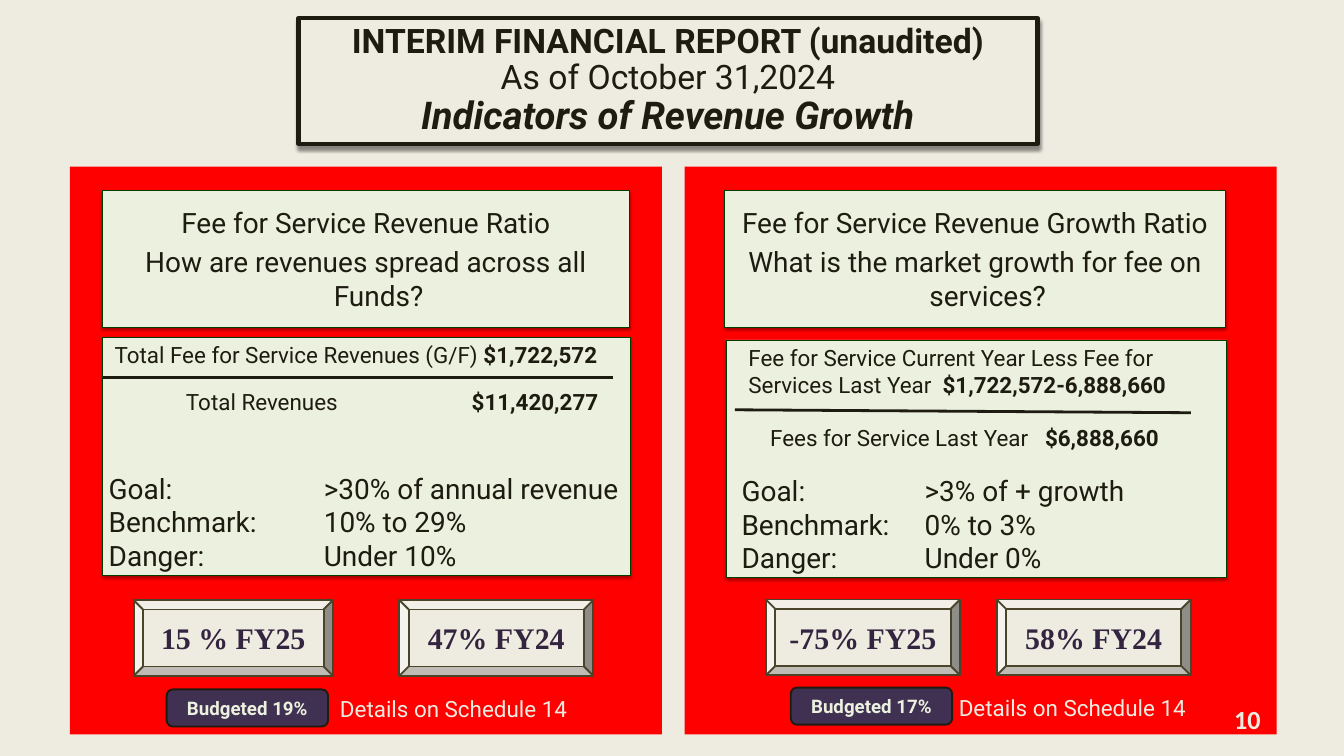
from dataclasses import dataclass

from lxml.etree import SubElement
from pptx import Presentation
from pptx.dml.color import RGBColor
from pptx.enum.shapes import MSO_CONNECTOR, MSO_SHAPE as Shape
from pptx.enum.text import MSO_ANCHOR as Anchor, PP_ALIGN as Align
from pptx.oxml.ns import qn
from pptx.util import Cm, Pt


@dataclass(frozen=True)
class Theme:
    paper: str = "EEECE1"
    panel: str = "FF0000"
    card: str = "EBF1DE"
    card_edge: str = "003E00"
    ink: str = "1E1C11"
    badge: str = "403152"
    bevel_edge: str = "4A452A"
    bevel_ink: str = "332440"
    body_font: str = "Roboto"
    bevel_font: str = "Times New Roman"
    number_font: str = "Calibri"
    title: float = 36.1
    subtitle: float = 41
    heading: float = 30
    formula: float = 24
    result: float = 32
    budget: float = 20
    page: float = 28


@dataclass(frozen=True)
class Ratio:
    """Wording of one panel, and its boxes in cm from the panel's corner."""
    question: tuple
    question_box: tuple
    card_box: tuple
    formula: tuple          # (label, value) above and below the rule
    formula_box: tuple
    formula_inset: float
    formula_tabs: tuple     # tab stops of each formula line
    formula_gap: float
    rule: tuple
    targets: tuple
    targets_box: tuple
    targets_tab: float
    results: tuple          # (text, box)
    budget: str
    budget_box: tuple
    details_box: tuple


THEME = Theme()
PANEL_SIZE = (22.38, 21.46)
LEVELS = ("Goal:", "Benchmark:", "Danger:")

REVENUE = Ratio(
    question=("Fee for Service Revenue Ratio",
              "How are revenues spread across all Funds?"),
    question_box=(1.22, 0.91, 19.94, 5.16),
    card_box=(1.24, 6.45, 19.96, 8.99),
    formula=(("\tTotal Fee for Service Revenues (G/F) ", "$1,722,572"),
             ("\tTotal Revenues\t", "$11,420,277")),
    formula_box=(1.24, 6.45, 19.96, 3.2),
    formula_inset=0.25,
    formula_tabs=((0.2,), (2.9, 13.7)),
    formula_gap=22,
    rule=(1.24, 7.98, 20.52, 7.98),
    targets=(">30% of annual revenue", "10% to 29%", "Under 10%"),
    targets_box=(1.22, 11.38, 19.94, 4.11),
    targets_tab=8.13,
    results=(("15 % FY25", (2.41, 16.38, 7.54, 2.87)),
             ("47% FY24", (12.45, 16.38, 7.34, 2.87))),
    budget="Budgeted 19%",
    budget_box=(3.66, 19.76, 6.1, 1.4),
    details_box=(9.96, 19.86, 9.86, 1.27))

GROWTH = Ratio(
    question=("Fee for Service Revenue Growth Ratio",
              "What is the market growth for fee on services?"),
    question_box=(1.5, 0.89, 18.95, 5.18),
    card_box=(1.57, 6.55, 18.9, 8.99),
    formula=(("Fee for Service Current Year Less Fee for Services Last Year\t",
              "$1,722,572-6,888,660"),
             ("\tFees for Service Last Year\t", "$6,888,660")),
    formula_box=(1.9, 6.58, 19.15, 4.37),
    formula_inset=0.51,
    formula_tabs=((7.34,), (0.82, 11.21)),
    formula_gap=28,
    rule=(1.9, 9.19, 19.13, 9.3),
    targets=(">3% of + growth", "0% to 3%", "Under 0%"),
    targets_box=(1.9, 11.48, 17.93, 4.11),
    targets_tab=6.92,
    results=(("-75% FY25", (3.07, 16.36, 7.34, 2.87)),
             ("58% FY24", (11.79, 16.36, 7.34, 2.87))),
    budget="Budgeted 17%",
    budget_box=(4.01, 19.69, 6.1, 1.4),
    details_box=(10.11, 19.81, 9.73, 1.27))


def colour(value):
    return RGBColor.from_string(value)


def within(origin, box):
    return (origin[0] + box[0], origin[1] + box[1], *box[2:])


def add_block(slide, kind, box, fill, edge=None, width=0, shadow=None):
    block = slide.shapes.add_shape(kind, *map(Cm, box))
    block.fill.solid()
    block.fill.fore_color.rgb = colour(fill)
    if edge:
        block.line.color.rgb = colour(edge)
        block.line.width = Pt(width)
    else:
        block.line.fill.background()
    block.shadow.inherit = False
    if shadow:
        opacity, blur, distance = shadow
        effects = block._element.spPr.find(qn("a:effectLst"))
        outer = SubElement(effects, qn("a:outerShdw"), blurRad=str(Pt(blur)),
                           dist=str(Pt(distance)), dir="5400000", rotWithShape="0")
        black = SubElement(outer, qn("a:srgbClr"), val="000000")
        SubElement(black, qn("a:alpha"), val=str(opacity * 1000))
    return block


def add_card(slide, box):
    return add_block(slide, Shape.RECTANGLE, box, THEME.card, THEME.card_edge,
                     0.75, shadow=(35, 3.1, 1.8))


def write(shape, lines, size, ink, font=THEME.body_font, bold=False,
          align=Align.LEFT, anchor=Anchor.TOP):
    """Fill a shape with lines; a line is a string or a tuple of run texts."""
    frame = shape.text_frame
    frame.word_wrap = True
    frame.vertical_anchor = anchor
    frame.text = "\n".join(line if isinstance(line, str) else "" for line in lines)
    for paragraph, line in zip(frame.paragraphs, lines):
        paragraph.alignment = align
        if not isinstance(line, str):
            for part in line:
                paragraph.add_run().text = part
        for run in paragraph.runs:
            run.font.name, run.font.size, run.font.bold = font, Pt(size), bold
            run.font.color.rgb = colour(ink)
    return frame.paragraphs


def add_text(slide, box, lines, size, ink, **style):
    area = slide.shapes.add_textbox(*map(Cm, box))
    return area.text_frame, write(area, lines, size, ink, **style)


def set_tabs(paragraph, stops):
    tabs = SubElement(paragraph._p.get_or_add_pPr(), qn("a:tabLst"))
    for stop in stops:
        SubElement(tabs, qn("a:tab"), pos=str(Cm(stop)), algn="l")


def add_title(slide, box):
    frame = add_block(slide, Shape.RECTANGLE, box, THEME.paper, THEME.ink, 4.5,
                      shadow=(43, 4, 4))
    text = frame.text_frame
    text.margin_left = text.margin_right = text.margin_top = text.margin_bottom = 0
    report, date, topic = write(
        frame, ("INTERIM FINANCIAL REPORT (unaudited)", "As of October 31,2024",
                "Indicators of Revenue Growth"),
        THEME.title, THEME.ink, bold=True, align=Align.CENTER, anchor=Anchor.MIDDLE)
    for paragraph in (report, date, topic):
        paragraph.line_spacing = 0.9
    date.runs[0].font.bold = False
    topic.runs[0].font.italic = True
    topic.runs[0].font.size = Pt(THEME.subtitle)


def add_panel(slide, origin, ratio):
    centred = dict(align=Align.CENTER, anchor=Anchor.MIDDLE)
    add_block(slide, Shape.RECTANGLE, (*origin, *PANEL_SIZE), THEME.panel)

    # Question
    card = add_card(slide, within(origin, ratio.question_box))
    for paragraph in write(card, ratio.question, THEME.heading, THEME.ink, **centred):
        paragraph.space_before = Pt(6)
        hanging = paragraph._p.get_or_add_pPr()
        hanging.set("marL", str(Cm(0.96)))
        hanging.set("indent", str(Cm(-0.96)))

    # Formula with its fraction rule
    add_card(slide, within(origin, ratio.card_box))
    frame, lines = add_text(slide, within(origin, ratio.formula_box), ratio.formula,
                            THEME.formula, THEME.ink)
    frame.margin_left = Cm(ratio.formula_inset)
    lines[1].space_before = Pt(ratio.formula_gap)
    for paragraph, stops in zip(lines, ratio.formula_tabs):
        set_tabs(paragraph, stops)
        paragraph.runs[-1].font.bold = True
    start, end = within(origin, ratio.rule[:2]), within(origin, ratio.rule[2:])
    rule = slide.shapes.add_connector(MSO_CONNECTOR.STRAIGHT, *map(Cm, start + end))
    rule.line.color.rgb = colour(THEME.ink)
    rule.line.width = Pt(3)
    SubElement(rule._element.spPr, qn("a:effectLst"))

    # Targets
    targets = [f"{level}\t{target}" for level, target in zip(LEVELS, ratio.targets)]
    for paragraph in add_text(slide, within(origin, ratio.targets_box), targets,
                              THEME.heading, THEME.ink)[1]:
        set_tabs(paragraph, (ratio.targets_tab,))

    # Results by year
    for result, box in ratio.results:
        bevel = add_block(slide, Shape.BEVEL, within(origin, box), THEME.paper,
                          THEME.bevel_edge, 2)
        write(bevel, (result,), THEME.result, THEME.bevel_ink, THEME.bevel_font,
              bold=True, **centred)

    # Budget badge and reference
    badge = add_block(slide, Shape.ROUNDED_RECTANGLE, within(origin, ratio.budget_box),
                      THEME.badge, THEME.ink, 2)
    write(badge, (ratio.budget,), THEME.budget, THEME.card, bold=True, **centred)
    add_text(slide, within(origin, ratio.details_box), ("Details on Schedule 14",),
             THEME.formula, THEME.paper)


def add_page_number(slide, box):
    frame, _ = add_text(slide, box, ("10",), THEME.page, THEME.paper,
                        font=THEME.number_font, bold=True, align=Align.RIGHT)
    frame.margin_left = frame.margin_right = frame.margin_top = frame.margin_bottom = 0


def main():
    deck = Presentation()
    deck.slide_width, deck.slide_height = Cm(50.8), Cm(50.8 * 9 / 16)
    slide = deck.slides.add_slide(deck.slide_layouts[6])
    slide.background.fill.solid()
    slide.background.fill.fore_color.rgb = colour(THEME.paper)
    add_title(slide, (11.28, 0.69, 27.94, 4.75))
    add_panel(slide, (2.64, 6.3), REVENUE)
    add_panel(slide, (25.88, 6.3), GROWTH)
    add_page_number(slide, (46.58, 26.57, 1.07, 1.19))
    deck.save("out.pptx")


if __name__ == "__main__":
    main()
